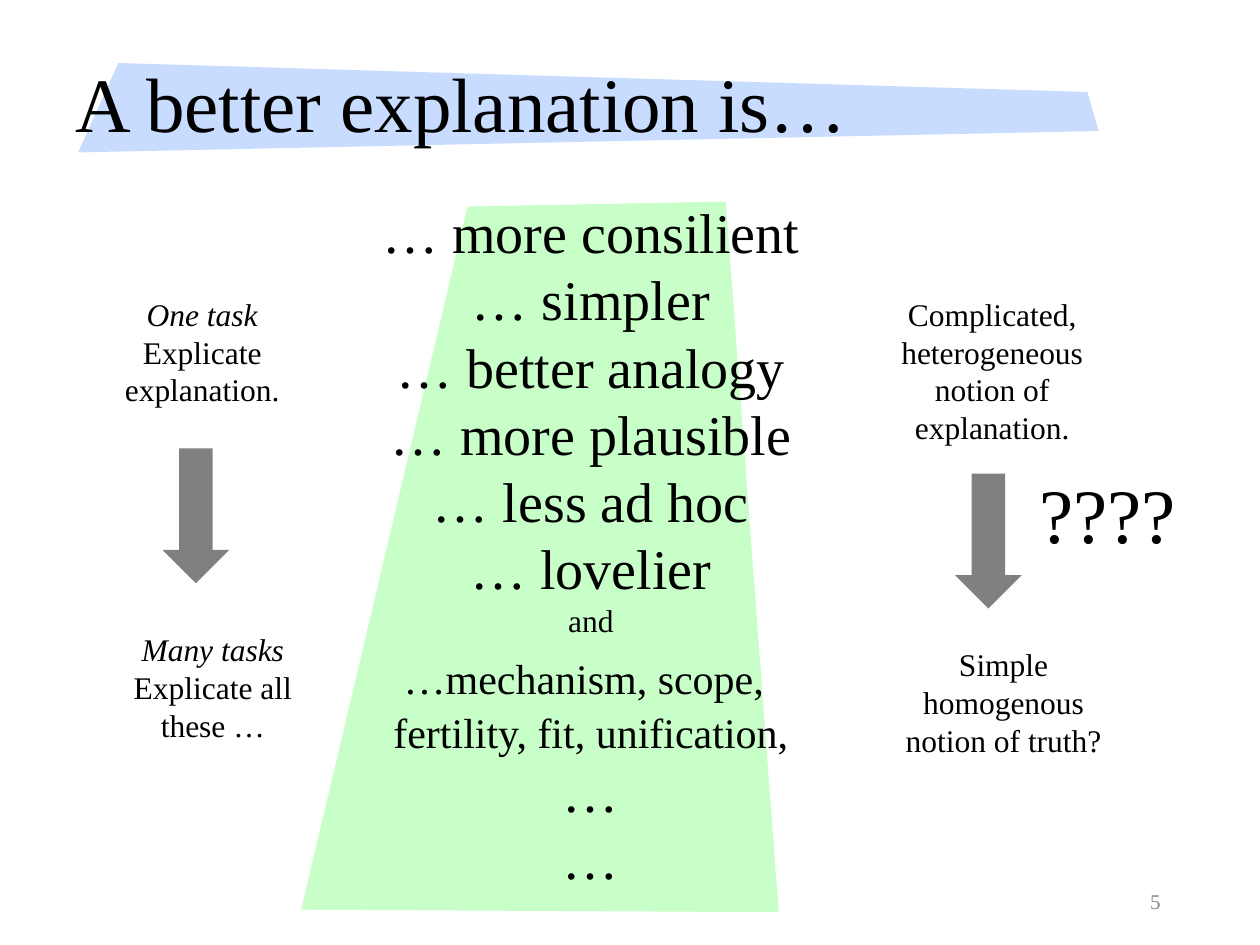
from pptx import Presentation
from pptx.dml.color import RGBColor
from pptx.enum.shapes import MSO_SHAPE
from pptx.enum.text import MSO_ANCHOR, PP_ALIGN
from pptx.util import Inches, Pt

FONT = "Times New Roman"
LEFT, MID, RIGHT = PP_ALIGN.LEFT, PP_ALIGN.CENTER, PP_ALIGN.RIGHT

PANELS = [
    ("C8FFC8", [(3.71, 1.64), (5.76, 1.6), (6.18, 7.24), (2.39, 7.22)]),
    ("C8DCFF", [(0.94, 0.5), (8.63, 0.73), (8.72, 1.04), (0.62, 1.21)]),
]
# Each line is a list of runs: (text, size)
VIRTUES = [[("… " + word, 32)] for word in (
    "more consilient", "simpler", "better analogy",
    "more plausible", "less ad hoc", "lovelier")] + [
    [("and", 18)],
    [("…mechanism, scope,", 24), (" ", 32)],
    [("fertility, fit, unification,", 24)],
    [("…", 32)],
    [("…", 32)],
]
# Box, heading in italics (or none), statement
NOTES = [
    ((6.8, 2.29, 2.15, 1.31), None,
     "Complicated, heterogeneous notion of explanation."),
    ((6.89, 5.07, 2.15, 1.01), None, "Simple homogenous notion of truth?"),
    ((0.77, 2.29, 1.67, 1.01), "One task", "Explicate explanation."),
    ((0.81, 4.95, 1.76, 1.01), "Many tasks", "Explicate all these …"),
]
ARROWS = [(7.58, 3.76), (1.29, 3.56)]


def paint(shape, color):
    shape.shadow.inherit = False
    shape.fill.solid()
    shape.fill.fore_color.rgb = RGBColor.from_string(color)
    shape.line.fill.background()


def add_panel(slide, color, points):
    start, *rest = [(Inches(x), Inches(y)) for x, y in points]
    pen = slide.shapes.build_freeform(*start)
    pen.add_line_segments(rest, close=True)
    paint(pen.convert_to_shape(), color)


def add_text(slide, box, lines, align=MID, color="000000", wrap=True,
             anchor=MSO_ANCHOR.TOP):
    """Add a text box; lines hold runs of (text, size[, italic])."""
    frame = slide.shapes.add_textbox(*map(Inches, box)).text_frame
    frame.word_wrap = wrap
    frame.vertical_anchor = anchor
    for i, runs in enumerate(lines):
        para = frame.add_paragraph() if i else frame.paragraphs[0]
        para.alignment = align
        for text, size, *slant in runs:
            run = para.add_run()
            run.text = text
            run.font.name = FONT
            run.font.size = Pt(size)
            run.font.italic = bool(slant)
            run.font.color.rgb = RGBColor.from_string(color)
    return frame


def main():
    deck = Presentation()
    deck.slide_width, deck.slide_height = Inches(10), Inches(7.5)
    slide = deck.slides.add_slide(deck.slide_layouts[6])

    for color, points in PANELS:
        add_panel(slide, color, points)

    title = add_text(slide, (0.5, 0.3, 7.32, 1.1),
                     [[("A better explanation is…", 44)]],
                     LEFT, anchor=MSO_ANCHOR.MIDDLE)
    title.paragraphs[0].line_spacing = 0.9
    add_text(slide, (7.06, 6.95, 2.25, 0.4), [[("5", 12)]],
             RIGHT, "898989", anchor=MSO_ANCHOR.MIDDLE)
    add_text(slide, (2.92, 1.52, 3.54, 5.76), VIRTUES, wrap=False)
    add_text(slide, (8.15, 3.65, 1.3, 0.84), [[("????", 44)]],
             LEFT, wrap=False)

    for box, head, body in NOTES:
        lines = [[(head, 18, True)]] if head else []
        add_text(slide, box, lines + [[(body, 18)]])

    for x, y in ARROWS:
        arrow = slide.shapes.add_shape(
            MSO_SHAPE.DOWN_ARROW, *map(Inches, (x, y, 0.53, 1.07)))
        paint(arrow, "808080")

    deck.save("out.pptx")


if __name__ == "__main__":
    main()
